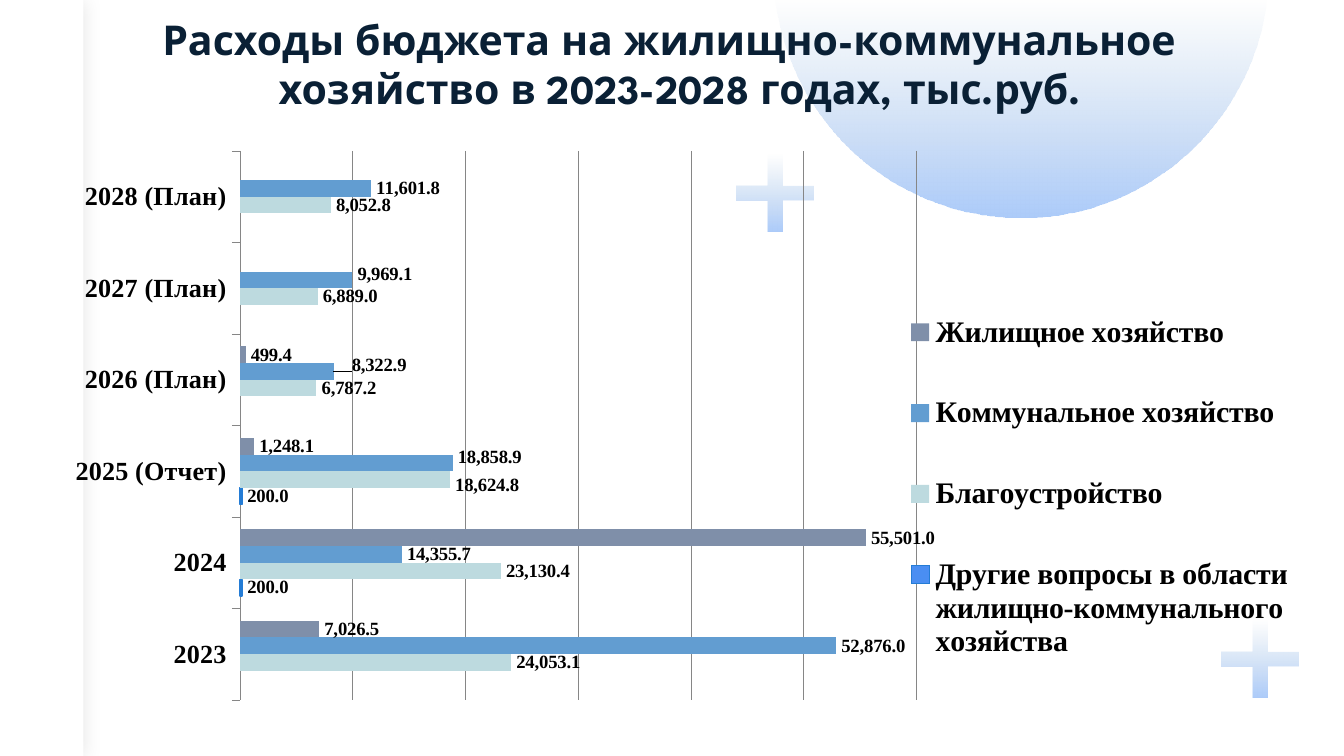
from copy import deepcopy
from math import asin, cos, pi, sin

from lxml.etree import SubElement
from pptx import Presentation
from pptx.chart.data import CategoryChartData
from pptx.dml.color import RGBColor
from pptx.enum.chart import XL_CHART_TYPE as ChartType
from pptx.enum.chart import XL_LABEL_POSITION as LabelPosition
from pptx.enum.chart import XL_LEGEND_POSITION as LegendPosition
from pptx.enum.chart import XL_TICK_MARK as TickMark
from pptx.enum.shapes import MSO_SHAPE as Preset
from pptx.enum.text import PP_ALIGN as Align
from pptx.oxml import parse_xml
from pptx.oxml.ns import nsdecls, qn
from pptx.util import Inches, Pt

WIDTH = 10
HEIGHT = WIDTH * 9 / 16
TITLE_FONT, CHART_FONT = "League Spartan", "Times New Roman"
GRID_COLOR = "868686"
NUMBER_FORMAT = "#,##0.0"

TITLE = [
    "Расходы бюджета на жилищно-коммунальное ",
    " хозяйство в 2023-2028 годах, тыс.руб.",
]
YEARS = ["2023", "2024", "2025 (Отчет)", "2026 (План)", "2027 (План)", "2028 (План)"]
# name, colour, values, label shifts by point as shares of the chart
SERIES = [
    ("Другие вопросы в области жилищно-коммунального хозяйства", "4A8EF2",
     [None, 200, 200, None, None, None], {}),
    ("Благоустройство", "BDDADF",
     [24053.1, 23130.4, 18624.8, 6787.2, 6889, 8052.8],
     {2: (0, 0.01), 3: (0, 0)}),
    ("Коммунальное хозяйство", "629DD1",
     [52876, 14355.7, 18858.9, 8322.9, 9969.1, 11601.8],
     {2: (0, -0.01), 3: (0.01, -0.01), 4: (0, -0.01)}),
    ("Жилищное хозяйство", "7F8FA9",
     [7026.5, 55501, 1248.1, 499.4, None, None], {}),
]
CROSSES = [(5.48, 1.15), (9.09, 4.62)]
CROSS_SIZE = 0.57
CIRCLE_X, CIRCLE_Y, RADIUS = 7.6, -0.22, 1.84
ARC_STEPS = 90


def color(value):
    return RGBColor.from_string(value)


def style_font(font, size, name=CHART_FONT, value="000000", bold=True):
    font.size, font.name, font.bold = Pt(size), name, bold
    font.color.rgb = color(value)


def style_line(line, value, width):
    line.color.rgb, line.width = color(value), Pt(width)


def fade_down(shape):
    """Fill from transparent at the top to solid blue at the bottom."""
    shape.shadow.inherit = False
    shape.line.fill.background()
    shape.fill.gradient()
    gradient = shape._element.spPr.find(qn("a:gradFill"))
    gradient.getparent().replace(gradient, parse_xml(
        f'<a:gradFill {nsdecls("a")} rotWithShape="1"><a:gsLst>'
        '<a:gs pos="0"><a:srgbClr val="B4CCE7"><a:alpha val="0"/></a:srgbClr></a:gs>'
        '<a:gs pos="100000"><a:srgbClr val="ACCBF9"/></a:gs>'
        '</a:gsLst><a:lin ang="5400000" scaled="0"/></a:gradFill>'))


def manual_layout(*shares, inner=False, edge=True):
    """Chart layout element from x, y and optionally width, height."""
    layout = parse_xml(f'<c:layout {nsdecls("c")}><c:manualLayout/></c:layout>')
    settings = [("layoutTarget", "inner")] if inner else []
    if edge:
        settings += [("xMode", "edge"), ("yMode", "edge")]
    settings += zip("xywh", shares)
    for tag, value in settings:
        SubElement(layout[0], qn(f"c:{tag}")).set("val", str(value))
    return layout


def set_layout(parent, position, layout):
    for old in parent.findall(qn("c:layout")):
        parent.remove(old)
    parent.insert(position, layout)


def add_decor(shapes):
    start = asin(-CIRCLE_Y / RADIUS)
    angles = [start + (pi - 2 * start) * i / ARC_STEPS for i in range(ARC_STEPS + 1)]
    points = [(Inches(CIRCLE_X + RADIUS * cos(a)), Inches(CIRCLE_Y + RADIUS * sin(a)))
              for a in angles]
    builder = shapes.build_freeform(*points[0])
    builder.add_line_segments(points[1:])
    fade_down(builder.convert_to_shape())

    band = shapes.add_shape(Preset.RECTANGLE, 0, 0, Inches(0.62), Inches(HEIGHT))
    band.fill.solid()
    band.fill.fore_color.rgb = color("FFFFFF")
    band.line.fill.background()
    band.shadow.inherit = False
    band._element.spPr.find(qn("a:effectLst")).append(parse_xml(
        f'<a:outerShdw {nsdecls("a")} blurRad="127000" dist="0" algn="ctr" rotWithShape="0">'
        '<a:srgbClr val="000000"><a:alpha val="10000"/></a:srgbClr></a:outerShdw>'))

    for left, top in CROSSES:
        cross = shapes.add_shape(Preset.CROSS, Inches(left), Inches(top),
                                 Inches(CROSS_SIZE), Inches(CROSS_SIZE))
        cross.adjustments[0] = 0.4
        fade_down(cross)


def add_title(shapes):
    box = shapes.add_textbox(Inches(0.04), Inches(0.06), Inches(9.96), Inches(0.84))
    frame = box.text_frame
    frame.word_wrap = True
    frame.text = "\n".join(TITLE)
    for paragraph in frame.paragraphs:
        paragraph.alignment = Align.CENTER
        style_font(paragraph.runs[0].font, 22, TITLE_FONT, "0A2035")


def add_labels(series, shifts):
    labels = series.data_labels
    labels.show_value = True
    labels.number_format = NUMBER_FORMAT
    labels.number_format_is_linked = False
    labels.position = LabelPosition.OUTSIDE_END
    style_font(labels.font, 10)
    for index, shift in shifts.items():
        label = series.points[index].data_label
        label.position = LabelPosition.OUTSIDE_END
        style_font(label.font, 10)
    root = labels._element
    for element in root.findall(qn("c:dLbl")):
        index = int(element.find(qn("c:idx")).get("val"))
        set_layout(element, 1, manual_layout(*shifts[index], edge=False))
        element.insert(2, deepcopy(root.find(qn("c:numFmt"))))
    root.append(parse_xml(
        f'<c:extLst {nsdecls("c")}><c:ext uri="{{CE6537A1-D6FC-4f65-9D91-7224C49458BB}}" '
        'xmlns:c15="http://schemas.microsoft.com/office/drawing/2012/chart">'
        '<c15:showLeaderLines val="0"/></c:ext></c:extLst>'))


def add_budget_chart(shapes):
    data = CategoryChartData(number_format=NUMBER_FORMAT)
    data.categories = YEARS
    for name, _, values, _ in SERIES:
        data.add_series(name, values)
    chart = shapes.add_chart(ChartType.BAR_CLUSTERED, Inches(0.17), Inches(0.94),
                             Inches(9.5), Inches(4.59), data).chart
    chart.has_title = False
    style_font(chart.font, 18, TITLE_FONT, bold=False)

    plot = chart.plots[0]
    plot.gap_width, plot.overlap, plot.vary_by_categories = 150, 0, False
    for series, (_, fill, _, shifts) in zip(plot.series, SERIES):
        series.invert_if_negative = False
        series.format.fill.solid()
        series.format.fill.fore_color.rgb = color(fill)
        add_labels(series, shifts)
    style_line(plot.series[0].format.line, "247CD5", 0.75)

    years = chart.category_axis
    years.major_tick_mark, years.minor_tick_mark = TickMark.OUTSIDE, TickMark.NONE
    style_line(years.format.line, GRID_COLOR, 0.25)
    style_font(years.tick_labels.font, 14)
    amounts = chart.value_axis
    amounts.visible = False
    amounts.minimum_scale, amounts.maximum_scale, amounts.major_unit = 0, 60000, 10000
    amounts.has_major_gridlines = True
    style_line(amounts.major_gridlines.format.line, GRID_COLOR, 0.25)

    chart.has_legend = True
    legend = chart.legend
    legend.position, legend.include_in_layout = LegendPosition.RIGHT, False
    style_font(legend.font, 16)
    set_layout(legend._element, 1, manual_layout(0.69, 0.23, 0.31, 0.71))
    set_layout(plot._element.getparent(), 0,
               manual_layout(0.17, 0.04, 0.53, 0.89, inner=True))


def main():
    presentation = Presentation()
    presentation.slide_width, presentation.slide_height = Inches(WIDTH), Inches(HEIGHT)
    slide = presentation.slides.add_slide(presentation.slide_layouts[6])
    add_decor(slide.shapes)
    add_title(slide.shapes)
    add_budget_chart(slide.shapes)
    presentation.save("out.pptx")


if __name__ == "__main__":
    main()
